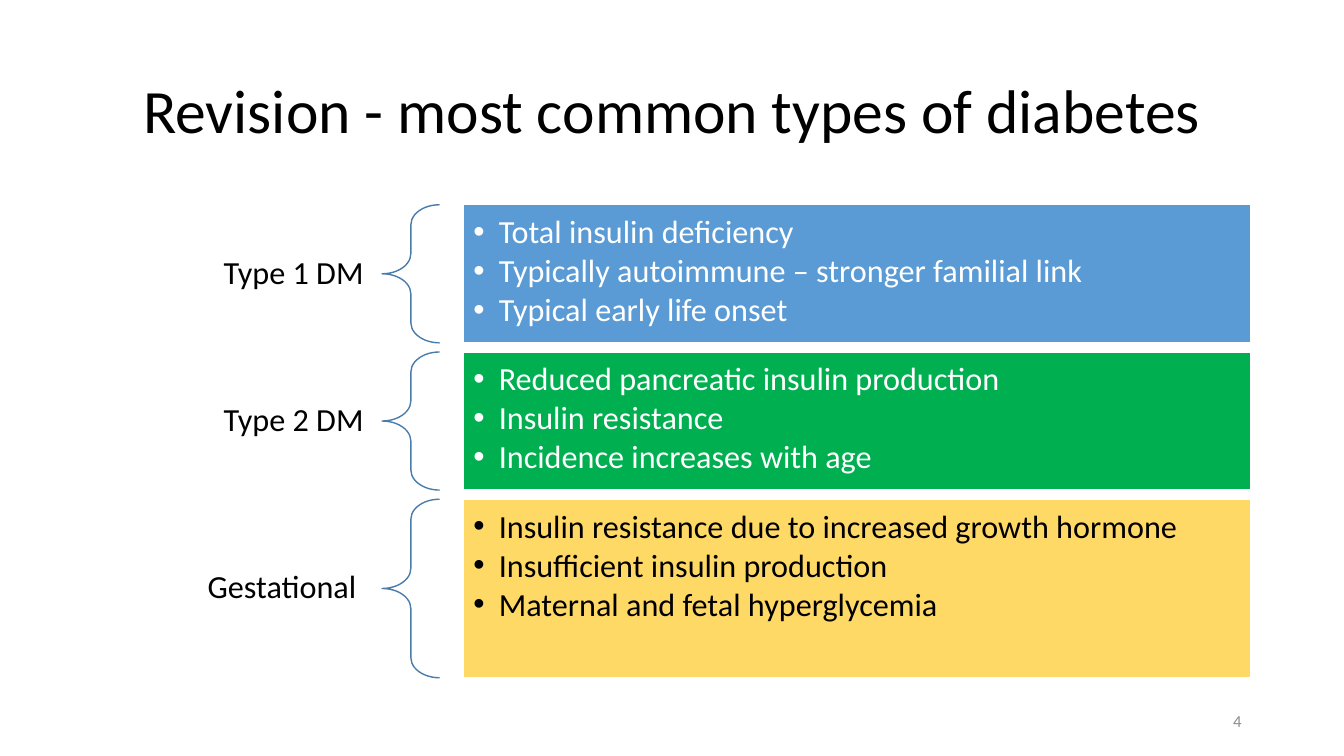
"""Build the revision slide on the most common types of diabetes."""
import dataclasses

import pptx
import pptx.dml.color
import pptx.enum.shapes
import pptx.enum.text
import pptx.oxml
import pptx.oxml.ns
import pptx.util
from pptx.util import Cm

ALIGN = pptx.enum.text.PP_ALIGN
ANCHOR = pptx.enum.text.MSO_ANCHOR


@dataclasses.dataclass(frozen=True)
class Theme:
    font: str = "Calibri"
    title_size: int = 44
    body_size: int = 23
    number_size: int = 12
    dark: str = "000000"
    light: str = "FFFFFF"
    muted: str = "8C8C8C"
    brace: str = "497CAB"
    type_1: str = "5B9BD5"
    type_2: str = "00B050"
    gestational: str = "FFD966"


def rgb(code):
    return pptx.dml.color.RGBColor.from_string(code)


def add_bullet(paragraph):
    properties = paragraph._p.get_or_add_pPr()
    properties.set("marL", str(Cm(0.64)))
    properties.set("indent", str(-Cm(0.64)))
    namespace = pptx.oxml.ns.nsdecls("a")
    properties.append(pptx.oxml.parse_xml(f'<a:buFont {namespace} typeface="Arial"/>'))
    properties.append(pptx.oxml.parse_xml(f'<a:buChar {namespace} char="•"/>'))


def write(frame, lines, *, font, size, color, align=ALIGN.LEFT, anchor=ANCHOR.MIDDLE,
          insets=(0.25, 0.13), spacing=0.9, after=0, bullets=False):
    frame.word_wrap = True
    frame.auto_size = pptx.enum.text.MSO_AUTO_SIZE.NONE
    frame.vertical_anchor = anchor
    frame.margin_left = frame.margin_right = Cm(insets[0])
    frame.margin_top = frame.margin_bottom = Cm(insets[1])
    for index, line in enumerate(lines):
        paragraph = frame.paragraphs[0] if index == 0 else frame.add_paragraph()
        paragraph.alignment = align
        paragraph.line_spacing = spacing
        paragraph.space_before = pptx.util.Pt(0)
        paragraph.space_after = pptx.util.Pt(after)
        if bullets:
            add_bullet(paragraph)
        run = paragraph.add_run()
        run.text = line
        run.font.name = font
        run.font.size = pptx.util.Pt(size)
        run.font.bold = False
        run.font.color.rgb = rgb(color)


class SlideBuilder:
    def __init__(self, slide, theme):
        self.slide = slide
        self.theme = theme
        self.bodies = [holder for holder in slide.placeholders
                       if holder.placeholder_format.idx > 0]

    def place(self, holder, left, top, width, height):
        holder.left, holder.top = Cm(left), Cm(top)
        holder.width, holder.height = Cm(width), Cm(height)

    def title(self, text, *box):
        heading = self.slide.shapes.title
        self.place(heading, *box)
        write(heading.text_frame, [text], font=self.theme.font,
              size=self.theme.title_size, color=self.theme.dark, align=ALIGN.CENTER)

    def label(self, text, *box, **text_format):
        caption = self.slide.shapes.add_textbox(*map(Cm, box))
        write(caption.text_frame, [text], font=self.theme.font,
              align=ALIGN.RIGHT, **text_format)

    def brace(self, *box):
        bracket = self.slide.shapes.add_shape(
            pptx.enum.shapes.MSO_SHAPE.LEFT_BRACE, *map(Cm, box))
        bracket.adjustments[0] = 0.35
        bracket.adjustments[1] = 0.5
        bracket.shadow.inherit = False
        bracket.fill.background()
        bracket.line.color.rgb = rgb(self.theme.brace)
        bracket.line.width = pptx.util.Pt(1)

    def features(self, lines, fill, color, *box):
        panel = self.bodies.pop(0)
        self.place(panel, *box)
        panel.fill.solid()
        panel.fill.fore_color.rgb = rgb(fill)
        panel.line.color.rgb = rgb(self.theme.light)
        panel.line.width = pptx.util.Pt(1)
        write(panel.text_frame, lines, font=self.theme.font, size=self.theme.body_size,
              color=color, anchor=ANCHOR.TOP, insets=(0.25, 0.28), after=3, bullets=True)

    def drop_unused(self):
        for holder in self.bodies:
            holder.element.getparent().remove(holder.element)


def main():
    theme = Theme()
    deck = pptx.Presentation()
    deck.slide_width, deck.slide_height = Cm(33.87), Cm(19.05)
    comparison_layout = deck.slide_layouts[4]
    builder = SlideBuilder(deck.slides.add_slide(comparison_layout), theme)
    builder.title("Revision - most common types of diabetes", 2.34, 1.02, 29.21, 3.68)

    diabetes_types = [
        ("Type 1 DM", theme.type_1, theme.light, 3.48,
         ["Total insulin deficiency",
          "Typically autoimmune – stronger familial link",
          "Typical early life onset"]),
        ("Type 2 DM", theme.type_2, theme.light, 3.48,
         ["Reduced pancreatic insulin production",
          "Insulin resistance",
          "Incidence increases with age"]),
        ("Gestational ", theme.gestational, theme.dark, 4.5,
         ["Insulin resistance due to increased growth hormone",
          "Insufficient insulin production",
          "Maternal and fetal hyperglycemia"]),
    ]
    label_height, row_gap = 1.27, 0.23
    top = 5.16
    for name, fill, color, height, lines in diabetes_types:
        builder.label(name, 2.34, top + (height - label_height) / 2, 7.29, label_height,
                      size=theme.body_size, color=theme.dark, insets=(0.46, 0.15))
        builder.brace(9.63, top, 1.45, height)
        builder.features(lines, fill, color, 11.68, top, 19.84, height)
        top += height + row_gap

    builder.label("4", 23.92, 17.66, 7.62, 1.01,
                  size=theme.number_size, color=theme.muted, spacing=1.0)
    builder.drop_unused()
    deck.save("out.pptx")


if __name__ == "__main__":
    main()
